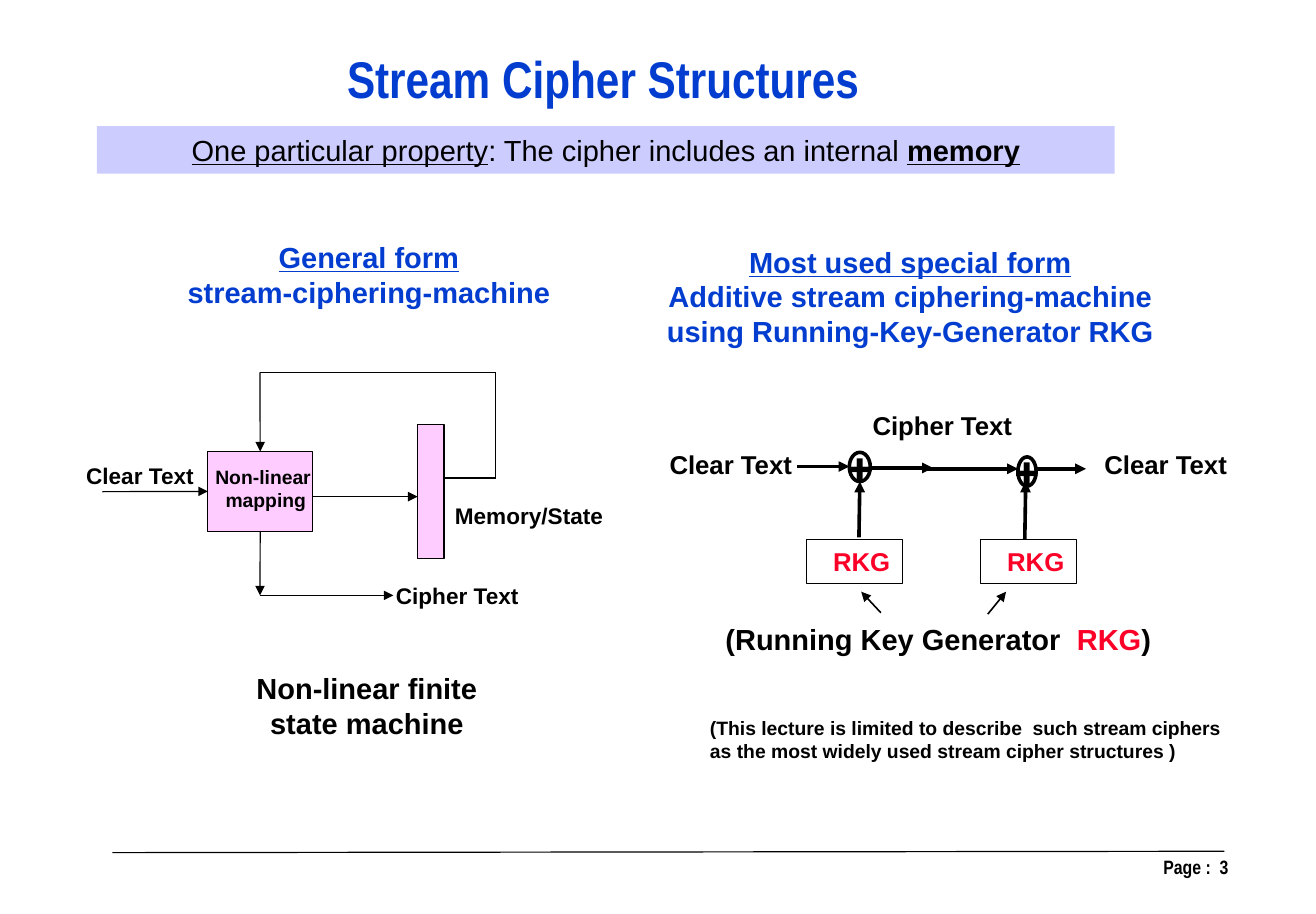
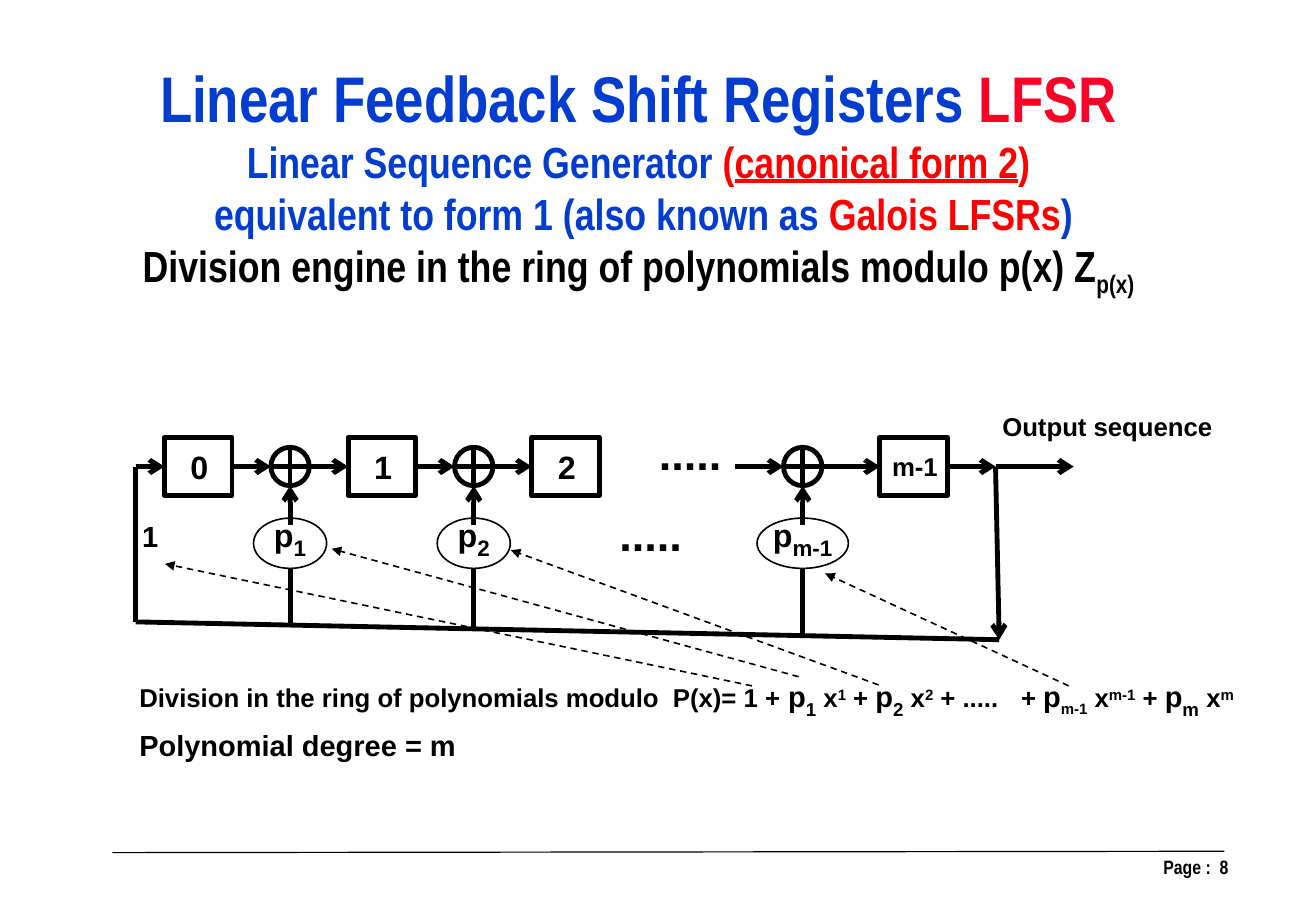
import lxml.etree
import pptx
import pptx.dml.color
import pptx.enum.dml
import pptx.enum.shapes
import pptx.enum.text
import pptx.oxml.ns
import pptx.util

Cm = pptx.util.Cm
Pt = pptx.util.Pt
SHAPE = pptx.enum.shapes.MSO_SHAPE
ALIGN = pptx.enum.text.PP_ALIGN
ANCHOR = pptx.enum.text.MSO_ANCHOR
qn = pptx.oxml.ns.qn

# Shared style
BLACK, WHITE, BLUE, RED, PURE_RED = "000000", "FFFFFF", "023DD0", "FC0128", "FF0000"
LAVENDER, PINK = "CCCCFF", "FFCCFF"
BODY, NARROW, SYMBOL = "Arial", "Arial Narrow", "Roboto Slab"
TOP, LEFT, BOTTOM, RIGHT = range(4)
INSET = (0.25, 0.13, 0.25, 0.13)


def rgb(value):
    return pptx.dml.color.RGBColor.from_string(value)


# Text
def add_run(p, text, size=16, color=BLACK, font=BODY, bold=True, underline=False, base=0):
    for i, line in enumerate(text.split("\n")):
        if i:
            p.add_line_break()
        if not line:
            continue
        r = p.add_run()
        r.text = line
        r.font.size = Pt(size)
        r.font.name = font
        r.font.bold = bold
        r.font.underline = underline
        r.font.color.rgb = rgb(color)
        if base:
            r.font._element.set("baseline", str(base * 1000))


def write(sp, paragraphs, align=ALIGN.CENTER, anchor=ANCHOR.MIDDLE, wrap=False,
          inset=INSET, **style):
    """Each paragraph is a list of (text, own style) runs, or a plain string."""
    tf = sp.text_frame
    tf.word_wrap = wrap
    tf.vertical_anchor = anchor
    tf.margin_left, tf.margin_top, tf.margin_right, tf.margin_bottom = map(Cm, inset)
    for i, runs in enumerate(paragraphs):
        p = tf.paragraphs[0] if i == 0 else tf.add_paragraph()
        p.alignment = align
        for text, own in [(runs, {})] if isinstance(runs, str) else runs:
            add_run(p, text, **{**style, **own})


def add_label(slide, box, paragraphs, **style):
    sp = slide.shapes.add_textbox(*map(Cm, box))
    write(sp, paragraphs, **style)
    return sp


# Shapes and lines
def add_box(slide, box, kind=SHAPE.RECTANGLE, fill=None, line=BLACK, width=0.75):
    sp = slide.shapes.add_shape(kind, *map(Cm, box))
    sp.shadow.inherit = False
    if fill:
        sp.fill.solid()
        sp.fill.fore_color.rgb = rgb(fill)
    else:
        sp.fill.background()
    if line:
        sp.line.color.rgb = rgb(line)
        sp.line.width = Pt(width)
    else:
        sp.line.fill.background()
    return sp


def add_line(slide, start, end, width=0.75, head=None, dash=False, source=None, target=None):
    """source and target are (shape, side) pairs to join."""
    cn = slide.shapes.add_connector(pptx.enum.shapes.MSO_CONNECTOR.STRAIGHT,
                                    *map(Cm, start + end))
    if source:
        cn.begin_connect(*source)
    if target:
        cn.end_connect(*target)
    cn.line.color.rgb = rgb(BLACK)
    cn.line.width = Pt(width)
    if dash:
        cn.line.dash_style = pptx.enum.dml.MSO_LINE.DASH
    props = cn._element.spPr
    if head:
        lxml.etree.SubElement(props.find(qn("a:ln")), qn("a:tailEnd"), type=head)
    lxml.etree.SubElement(props, qn("a:effectLst"))


def new_slide(prs, page, title_box, title):
    slide = prs.slides.add_slide(prs.slide_layouts[6])
    add_line(slide, (2.46, 18.66), (26.8, 18.63))
    add_label(slide, (20.64, 18.57, 6.55, 1.32), [f"Page :  {page}"], align=ALIGN.RIGHT,
              anchor=ANCHOR.TOP, wrap=True, inset=(0.3, 0.15, 0.3, 0.15), size=12, font=NARROW)
    add_label(slide, title_box, title, anchor=ANCHOR.TOP, font=NARROW, color=BLUE)
    return slide


# Slide: stream cipher structures
def add_state_machine(slide):
    mapping = add_box(slide, (4.55, 9.88, 2.29, 1.75), fill=PINK)
    write(mapping, ["Non-linear\n mapping"], size=12, inset=(0.13, 0, 0, 0.13))
    add_box(slide, (9.14, 9.3, 0.58, 2.92), fill=PINK)

    x = 5.69
    feedback = [(9.72, 10.46), (10.85, 10.46), (10.85, 8.15), (x, 8.15)]
    for start, end in zip(feedback, feedback[1:]):
        add_line(slide, start, end)
    add_line(slide, feedback[-1], (x, 9.88), head="triangle", target=(mapping, TOP))
    add_line(slide, (2.24, 10.76), (4.55, 10.76), head="triangle", target=(mapping, LEFT))
    add_line(slide, (6.84, 10.87), (9.14, 10.87), head="triangle")
    add_line(slide, (x, 11.63), (x, 13.03), head="triangle", source=(mapping, BOTTOM))
    add_line(slide, (x, 13.03), (8.61, 13.03), 1, "triangle")

    for text, box in [("Clear Text", (1.63, 9.98, 2.87, 0.86)),
                      ("Memory/State", (9.7, 10.85, 3.76, 0.86)),
                      ("Cipher Text", (8.41, 12.6, 3.2, 0.86))]:
        add_label(slide, box, [text], size=14)
    add_label(slide, (5.25, 14.53, 5.56, 1.8), ["Non-linear finite", "state machine"], size=18)


def add_additive_cipher(slide):
    for text, box in [("Cipher Text", (18.82, 8.84, 3.61, 0.94)),
                      ("Clear Text", (14.37, 9.68, 3.25, 0.94)),
                      ("Clear Text", (23.89, 9.68, 3.25, 0.94))]:
        add_label(slide, box, [text])
    for left in (17.65, 21.46):
        generator = add_box(slide, (left, 11.81, 2.11, 0.97))
        write(generator, ["RKG"], anchor=ANCHOR.TOP, color=RED, inset=(0.56, 0.13, 0.25, 0.13))
    for box in [(18.59, 9.9, 0.46, 0.64), (22.28, 10, 0.4, 0.64)]:
        adder = add_box(slide, box, SHAPE.OVAL, WHITE, width=2.25)
        write(adder, ["+"], size=27, font=SYMBOL)
    for start, end in [((17.45, 10.21), (18.59, 10.21)), ((19.08, 10.24), (20.42, 10.24)),
                       ((20.3, 10.26), (22.28, 10.26)), ((22.68, 10.26), (23.77, 10.26)),
                       ((18.8, 11.76), (18.82, 10.54)), ((22.43, 11.81), (22.45, 10.54))]:
        add_line(slide, start, end, 2.25, "triangle")
    for start, end in [((19.28, 13.41), (18.85, 12.95)), ((21.62, 13.44), (22.02, 12.95))]:
        add_line(slide, start, end, 1, "triangle")
    add_label(slide, (15.63, 13.47, 10.08, 1.04),
              [[("(Running Key Generator  ", {}), ("RKG", {"color": RED}), (")", {})]],
              align=ALIGN.LEFT, size=18)


def build_structures(prs):
    slide = new_slide(prs, 3, (7.29, 0.89, 11.84, 1.63),
                      [[("Stream Cipher Structures", {"size": 32})]])
    band = add_box(slide, (2.12, 2.76, 22.28, 1.04), fill=LAVENDER, line=None)
    write(band, [[("One particular property", {"underline": True}),
                  (": The cipher includes an internal ", {}),
                  ("memory", {"bold": True, "underline": True})]],
          wrap=True, size=18, bold=False)
    line = {"underline": True}
    headings = [((3.73, 5.1, 8.69, 1.8),
                 [[("General form\n", line), ("stream-ciphering-machine", {})]]),
                ((13.89, 5.2, 12.07, 2.57),
                 [[("Most used special form", line)],
                  "Additive stream ciphering-machine\nusing Running-Key-Generator RKG"])]
    for box, paragraphs in headings:
        add_label(slide, box, paragraphs, size=18, color=BLUE)
    add_state_machine(slide)
    add_additive_cipher(slide)
    add_label(slide, (15.29, 15.54, 12.12, 1.27),
              ["(This lecture is limited to describe  such stream ciphers "
               "as the most widely used stream cipher structures )"],
              align=ALIGN.LEFT, anchor=ANCHOR.TOP, wrap=True, size=12)


# Slide: linear feedback shift registers
def add_register(slide):
    row, half_pitch, first = 10.21, 2.01, 4.34
    cell_w, cell_h, adder_d = 1.48, 1.28, 0.84
    bus_left, bus_right = (2.97, 13.61), (21.87, 14)
    out_x = 21.79
    slope = (bus_right[1] - bus_left[1]) / (bus_right[0] - bus_left[0])

    # Register cells
    cells = []
    for text, x, size in [("0", first, 20), ("1", first + 2 * half_pitch, 20),
                          ("2", first + 4 * half_pitch, 20), ("m-1", 20, 16)]:
        cell = add_box(slide, (x - cell_w / 2, row - cell_h / 2, cell_w, cell_h), width=3)
        write(cell, [text], size=size, inset=(0.05, 0, 0, 0))
        cells.append(cell)

    # Feedback bus
    add_line(slide, (out_x, row), bus_right, 3, "arrow")
    add_line(slide, bus_left, bus_right, 3)
    add_line(slide, (bus_left[0], row), bus_left, 3)
    add_line(slide, (bus_left[0], row), (first, row), 3, "arrow", target=(cells[0], LEFT))
    add_line(slide, (20, row), (out_x, row), 3, "arrow", source=(cells[3], RIGHT))
    add_line(slide, (out_x, row), (23.5, row), 3, "arrow")

    # Adders with their coefficient taps
    taps = [("1", first + half_pitch, 1.6, cells[0], cells[1]),
            ("2", first + 3 * half_pitch, 1.6, cells[1], cells[2]),
            ("m-1", 17.57, 2, None, cells[3])]
    tap_top, tap_h = 11.34, 1.1
    for index, x, tap_w, before, after in taps:
        r = adder_d / 2
        add_box(slide, (x - r, row - r, adder_d, adder_d), SHAPE.FLOWCHART_OR, width=3)
        add_line(slide, (16.08, row), (x - r, row), 3, "arrow",
                 source=(before, RIGHT) if before else None)
        add_line(slide, (x + r, row), (x + 2, row), 3, "arrow", target=(after, LEFT))
        add_line(slide, (x, 11.48), (x, row + r), 3, "arrow")
        bus_y = bus_left[1] + slope * (x - bus_left[0])
        add_line(slide, (x, bus_y), (x, tap_top + tap_h), 3)
        tap = add_box(slide, (x - tap_w / 2, tap_top, tap_w, tap_h), SHAPE.OVAL, width=1)
        write(tap, [[("p", {"size": 20}), (index, {"size": 24, "base": -25})]],
              inset=(0, 0, 0, 0.36))

    for text, box, size in [("1", (2.86, 11.21, 0.9, 1.04), 18),
                            (".....", (14.17, 9.17, 1.88, 1.45), 28),
                            (".....", (13.31, 10.95, 1.88, 1.45), 28),
                            ("Output sequence", (21.69, 8.86, 5.11, 0.94), 16)]:
        add_label(slide, box, [text], align=ALIGN.LEFT, size=size)


def add_polynomial(slide):
    p, high = ("p", {"size": 18}), {"base": 30}

    def low(text, size=20):
        return text, {"size": size, "base": -25}

    terms = [("Division in the ring of polynomials modulo  P(x)= 1 + ", {}),
             p, low("1"), (" x", {}), ("1", high), (" + ", {}),
             p, low("2"), (" x", {}), ("2", high), (" + .....\t+ ", {}),
             p, low("m-1", 16), (" x", {}), ("m-1", high), (" + ", {}),
             p, low("m"), (" x", {}), ("m", high)]
    sp = add_label(slide, (2.8, 14.75, 25.4, 1.04), [terms], align=ALIGN.LEFT)
    # Tab stop after the dots
    stops = lxml.etree.SubElement(sp.text_frame.paragraphs[0]._p.get_or_add_pPr(), qn("a:tabLst"))
    lxml.etree.SubElement(stops, qn("a:tab"), pos=str(Cm(19.3)), algn="l")
    add_label(slide, (2.8, 15.79, 7.5, 1.04), ["Polynomial degree = m"],
              align=ALIGN.LEFT, size=18)
    # Pointers from each term to its coefficient
    for term, coefficient in [((16.46, 15.01), (3.61, 12.34)), ((17.48, 14.81), (7.26, 12.01)),
                              ((19.23, 14.99), (11.18, 12.04)), ((23.39, 15.01), (18.06, 12.55))]:
        add_line(slide, term, coefficient, 1, "triangle", dash=True)


def build_registers(prs):
    sub, sub_red = {"size": 27}, {"size": 27, "color": PURE_RED}
    sub_black = {"size": 27, "color": BLACK}
    slide = new_slide(prs, 8, (2.71, 1.13, 22.53, 5.44), [
        [("Linear Feedback Shift Registers ", {"size": 40}), ("LFSR", {"size": 40, "color": RED})],
        [("Linear Sequence Generator ", sub), ("(", sub_red),
         ("canonical form 2", {**sub_red, "underline": True}), (")\n", sub_red),
         (" equivalent to form 1 (also known as ", sub), ("Galois LFSRs", sub_red), (")", sub)],
        [("Division engine in the ring of polynomials modulo p(x) Z", sub_black),
         ("p(x)", {**sub_black, "base": -25})]])
    add_register(slide)
    add_polynomial(slide)


def main():
    prs = pptx.Presentation()
    prs.slide_width, prs.slide_height = Pt(816.5), Pt(567)
    build_structures(prs)
    build_registers(prs)
    prs.save("out.pptx")


if __name__ == "__main__":
    main()
